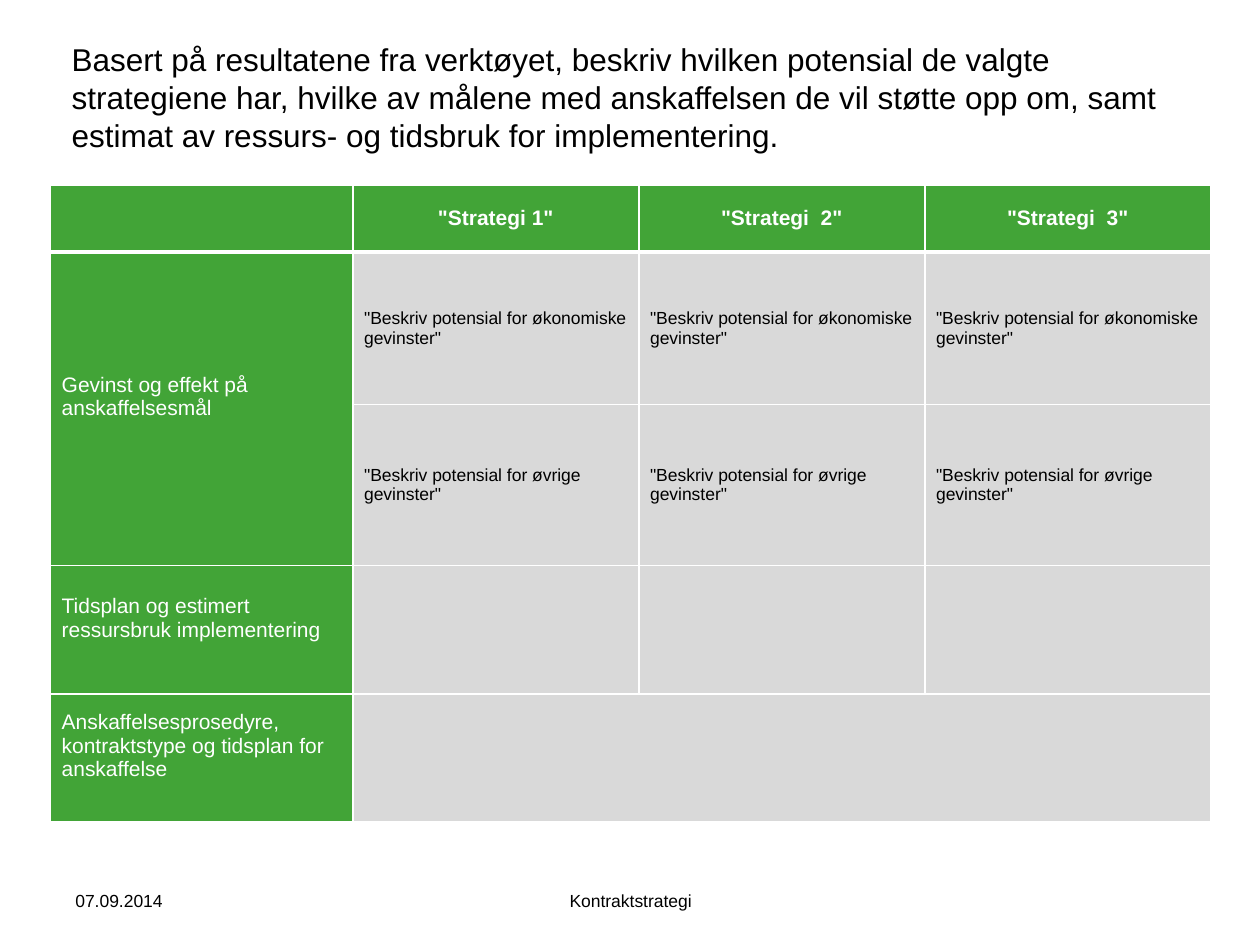
from dataclasses import dataclass

from lxml import etree
from pptx import Presentation
from pptx.dml.color import RGBColor
from pptx.enum.text import MSO_ANCHOR, PP_ALIGN
from pptx.oxml.ns import qn
from pptx.util import Inches, Pt

LEFT, CENTER = PP_ALIGN.LEFT, PP_ALIGN.CENTER
TOP, MIDDLE = MSO_ANCHOR.TOP, MSO_ANCHOR.MIDDLE
BLANK_LAYOUT = 6


@dataclass(frozen=True)
class Theme:
    font: str = "Arial"
    green: str = "42A437"
    gray: str = "D9D9D9"
    white: str = "FFFFFF"
    black: str = "000000"
    title_size: int = 18
    heading_size: int = 12
    body_size: int = 10
    thin_line: int = 1
    thick_line: int = 3


class SlideBuilder:
    def __init__(self, slide, theme):
        self.slide = slide
        self.theme = theme

    def format_text(self, text_frame, size, color, align=LEFT, bold=False):
        for paragraph in text_frame.paragraphs:
            paragraph.alignment = align
            for run in paragraph.runs:
                run.font.name = self.theme.font
                run.font.size = Pt(size)
                run.font.bold = bold
                run.font.color.rgb = RGBColor.from_string(color)

    def text(self, content, left, top, width, height, size,
             align=LEFT, anchor=MIDDLE):
        shape = self.slide.shapes.add_textbox(
            Inches(left), Inches(top), Inches(width), Inches(height))
        text_frame = shape.text_frame
        text_frame.word_wrap = True
        text_frame.vertical_anchor = anchor
        text_frame.text = content
        self.format_text(text_frame, size, self.theme.black, align)

    def borders(self, cell, bottom_width):
        properties = cell._tc.get_or_add_tcPr()
        for side in "LRTB":
            width = bottom_width if side == "B" else self.theme.thin_line
            line = etree.SubElement(properties, qn(f"a:ln{side}"), w=str(Pt(width)))
            fill = etree.SubElement(line, qn("a:solidFill"))
            etree.SubElement(fill, qn("a:srgbClr"), val=self.theme.white)

    def cell(self, cell, content, is_header_row, is_header_column):
        theme = self.theme
        is_heading = is_header_row or is_header_column
        self.borders(cell, theme.thick_line if is_header_row else theme.thin_line)
        cell.fill.solid()
        cell.fill.fore_color.rgb = RGBColor.from_string(
            theme.green if is_heading else theme.gray)
        cell.vertical_anchor = MIDDLE
        cell.margin_left = cell.margin_right = Inches(0.09)
        cell.margin_top = Inches(0.04)
        # Row headings sit slightly above the middle of their cells.
        raised = is_header_column and not is_header_row
        cell.margin_bottom = Inches(0.23 if raised else 0.04)
        cell.text_frame.text = content
        self.format_text(
            cell.text_frame,
            theme.heading_size if is_heading else theme.body_size,
            theme.white if is_heading else theme.black,
            CENTER if is_header_row else LEFT,
            bold=is_header_row)

    def table(self, rows, left, top, column_widths, row_heights, merges):
        table = self.slide.shapes.add_table(
            len(rows), len(column_widths), Inches(left), Inches(top),
            Inches(sum(column_widths)), Inches(sum(row_heights))).table
        for column, width in zip(table.columns, column_widths):
            column.width = Inches(width)
        for row, height in zip(table.rows, row_heights):
            row.height = Inches(height)
        for row_index, row in enumerate(rows):
            for column_index, content in enumerate(row):
                self.cell(table.cell(row_index, column_index), content,
                          row_index == 0, column_index == 0)
        for first, last in merges:
            table.cell(*first).merge(table.cell(*last))


def main():
    presentation = Presentation()
    presentation.slide_width = Inches(10)
    presentation.slide_height = Inches(7.5)
    slide = presentation.slides.add_slide(presentation.slide_layouts[BLANK_LAYOUT])
    theme = Theme()
    builder = SlideBuilder(slide, theme)

    strategy_count = 3
    rows = [
        ["", '"Strategi 1"', '"Strategi  2"', '"Strategi  3"'],
        ["Gevinst og effekt på anskaffelsesmål"]
        + ['"Beskriv potensial for økonomiske gevinster"'] * strategy_count,
        [""] + ['"Beskriv potensial for øvrige gevinster"'] * strategy_count,
        ["Tidsplan og estimert ressursbruk implementering"] + [""] * strategy_count,
        ["Anskaffelsesprosedyre, kontraktstype og tidsplan for anskaffelse"]
        + [""] * strategy_count,
    ]
    builder.table(
        rows, 0.4, 1.47,
        column_widths=[2.4] + [2.27] * strategy_count,
        row_heights=[0.53, 1.21, 1.28, 1.02, 1.01],
        merges=[((1, 0), (2, 0)), ((4, 1), (4, strategy_count))])

    builder.text(
        "Basert på resultatene fra verktøyet, beskriv hvilken potensial de valgte "
        "strategiene har, hvilke av målene med anskaffelsen de vil støtte opp om, "
        "samt estimat av ressurs- og tidsbruk for implementering.",
        0.47, 0.27, 9.24, 1.25, theme.title_size, anchor=TOP)
    builder.text("07.09.2014", 0.5, 6.95, 2.33, 0.4, theme.body_size)
    builder.text("Kontraktstrategi", 3.42, 6.95, 3.17, 0.4, theme.body_size, CENTER)

    presentation.save("out.pptx")


if __name__ == "__main__":
    main()
